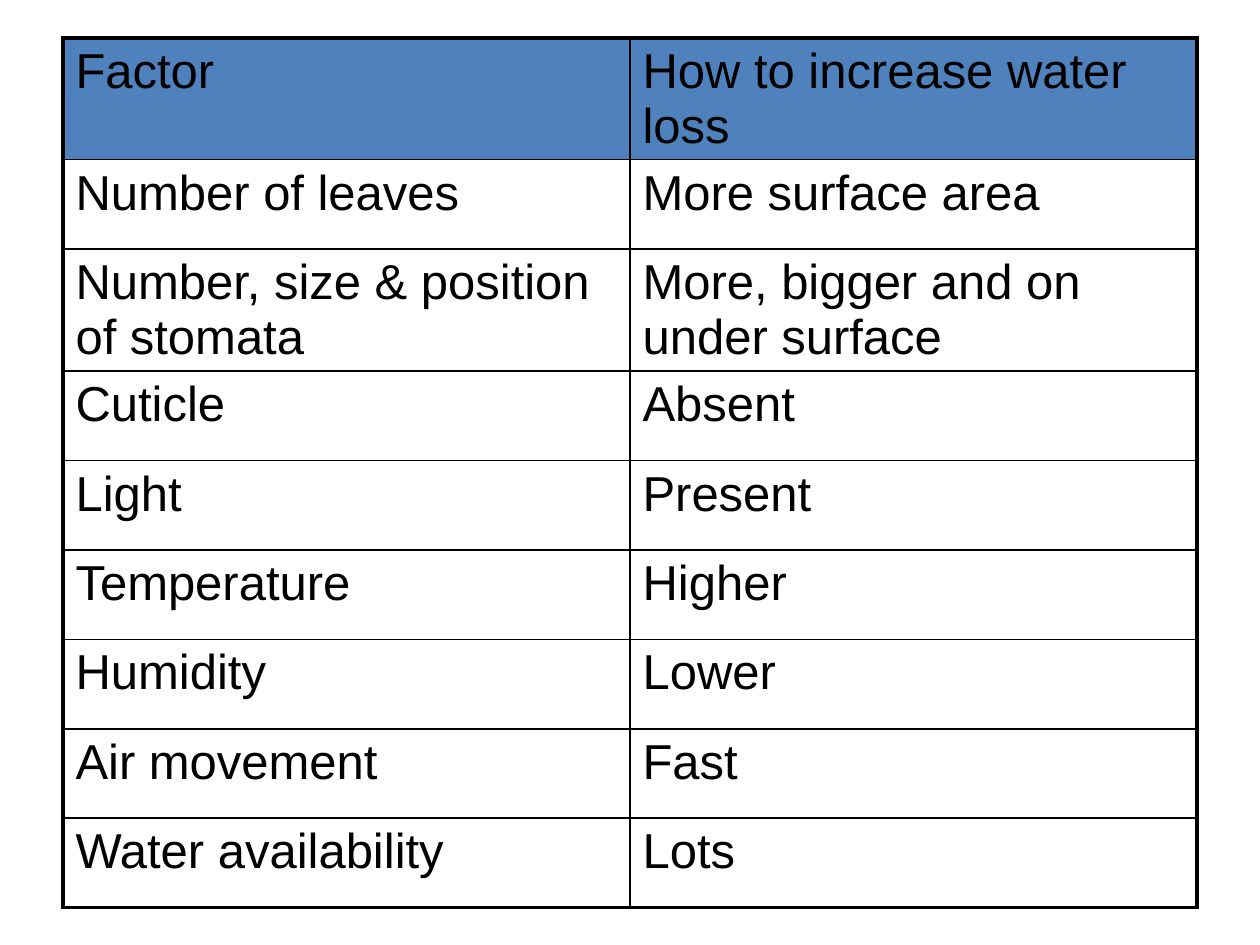
from lxml import etree
from pptx import Presentation
from pptx import util as u
from pptx.dml.color import RGBColor
from pptx.oxml import ns

BLACK = "000000"
HEADER_BLUE = "4F81BD"
THIN, THICK = 1, 2.25

FACTORS = [
    ("Factor", "How to increase water loss"),
    ("Number of leaves", "More surface area"),
    ("Number, size & position of stomata", "More, bigger and on under surface"),
    ("Cuticle", "Absent"),
    ("Light", "Present"),
    ("Temperature", "Higher"),
    ("Humidity", "Lower"),
    ("Air movement", "Fast"),
    ("Water availability", "Lots"),
]


def color(hex_string):
    return RGBColor.from_string(hex_string)


def add_child(parent, tag, **attributes):
    return etree.SubElement(parent, ns.qn(tag), **attributes)


def set_borders(cell, widths):
    """Draw the cell's sides; widths maps L, R, T, B to points."""
    properties = cell._tc.get_or_add_tcPr()
    for position, side in enumerate("LRTB"):
        line = etree.Element(ns.qn(f"a:ln{side}"), w=str(u.Pt(widths[side])))
        fill = add_child(line, "a:solidFill")
        add_child(fill, "a:srgbClr", val=BLACK)
        # Borders must come before the cell fill
        properties.insert(position, line)


def set_text(cell, words):
    paragraph = cell.text_frame.paragraphs[0]
    # Spacing before is a share of the text size
    spacing = add_child(paragraph._p.get_or_add_pPr(), "a:spcBef")
    add_child(spacing, "a:spcPct", val="20000")
    run = paragraph.add_run()
    run.text = words
    run.font.name = "Arial"
    run.font.size = u.Pt(28)
    run.font.bold = False
    run.font.color.rgb = color(BLACK)


def set_fill(cell, is_header):
    if is_header:
        cell.fill.solid()
        cell.fill.fore_color.rgb = color(HEADER_BLUE)
    else:
        cell.fill.background()


def add_factor_table(slide, rows):
    last_row, last_column = len(rows) - 1, len(rows[0]) - 1
    row_height = u.Inches(0.71)
    table = slide.shapes.add_table(
        len(rows), len(rows[0]), u.Inches(0.5), u.Inches(0.3),
        u.Inches(9), row_height * len(rows)).table
    table.horz_banding = False
    for row, entries in enumerate(rows):
        table.rows[row].height = row_height
        for column, words in enumerate(entries):
            cell = table.cell(row, column)
            set_text(cell, words)
            set_fill(cell, row == 0)
            # Outer edges are thick, inner ones thin
            set_borders(cell, {
                "L": THICK if column == 0 else THIN,
                "R": THICK if column == last_column else THIN,
                "T": THICK if row == 0 else THIN,
                "B": THICK if row == last_row else THIN,
            })


def main():
    presentation = Presentation()
    presentation.slide_width = u.Inches(10)
    presentation.slide_height = u.Inches(7.5)
    slide = presentation.slides.add_slide(presentation.slide_layouts[6])
    add_factor_table(slide, FACTORS)
    presentation.save("out.pptx")


if __name__ == "__main__":
    main()
